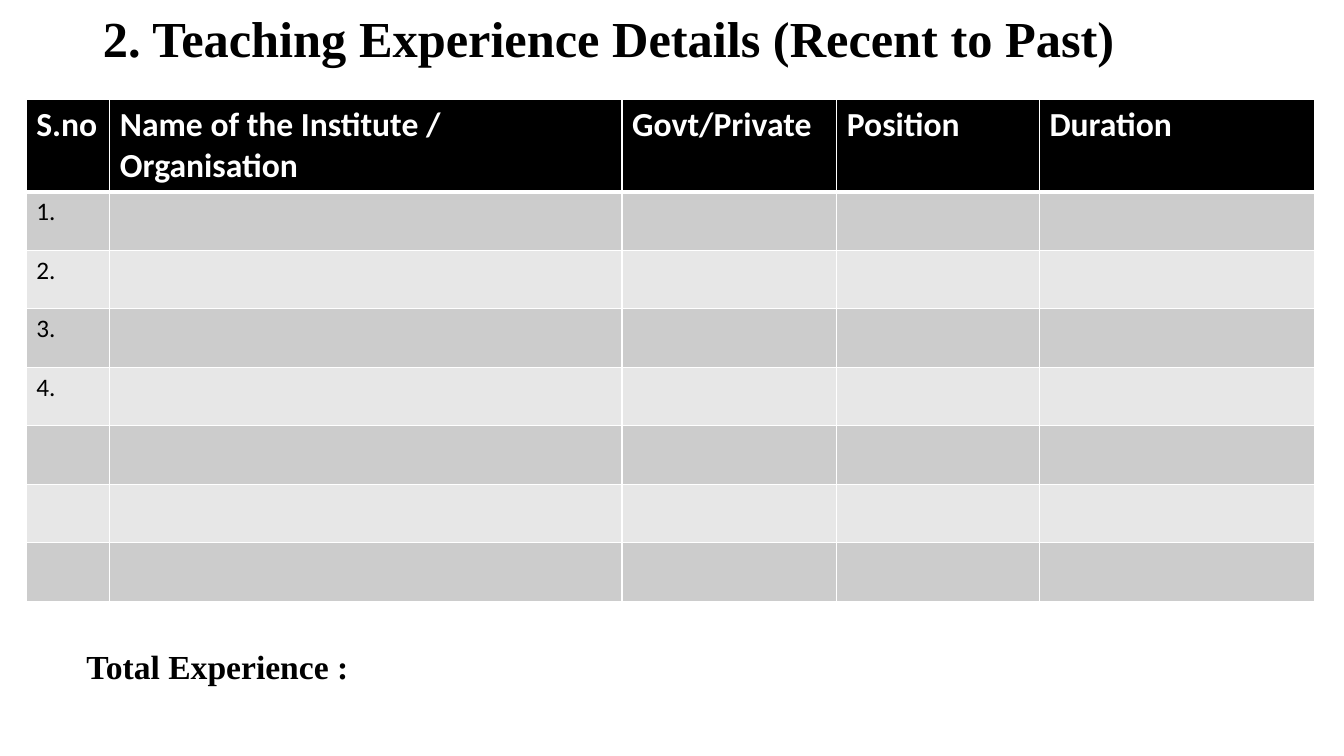
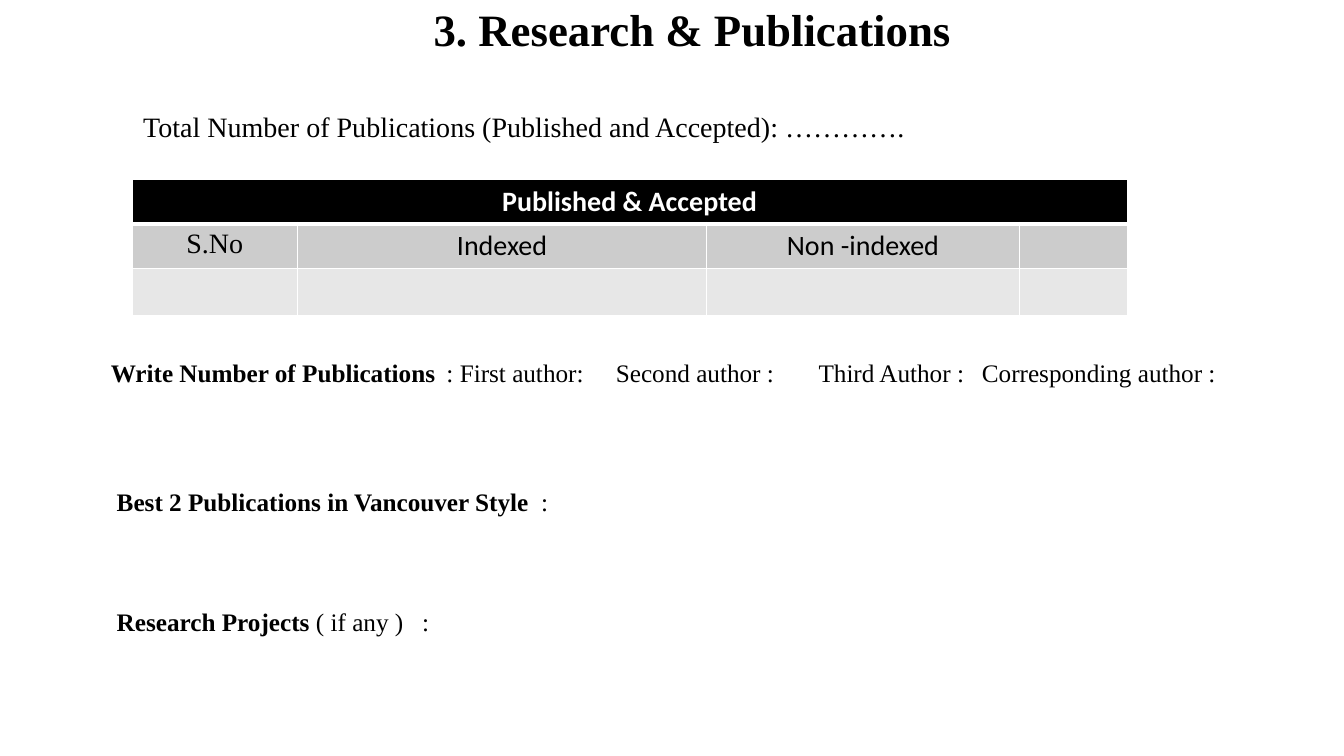
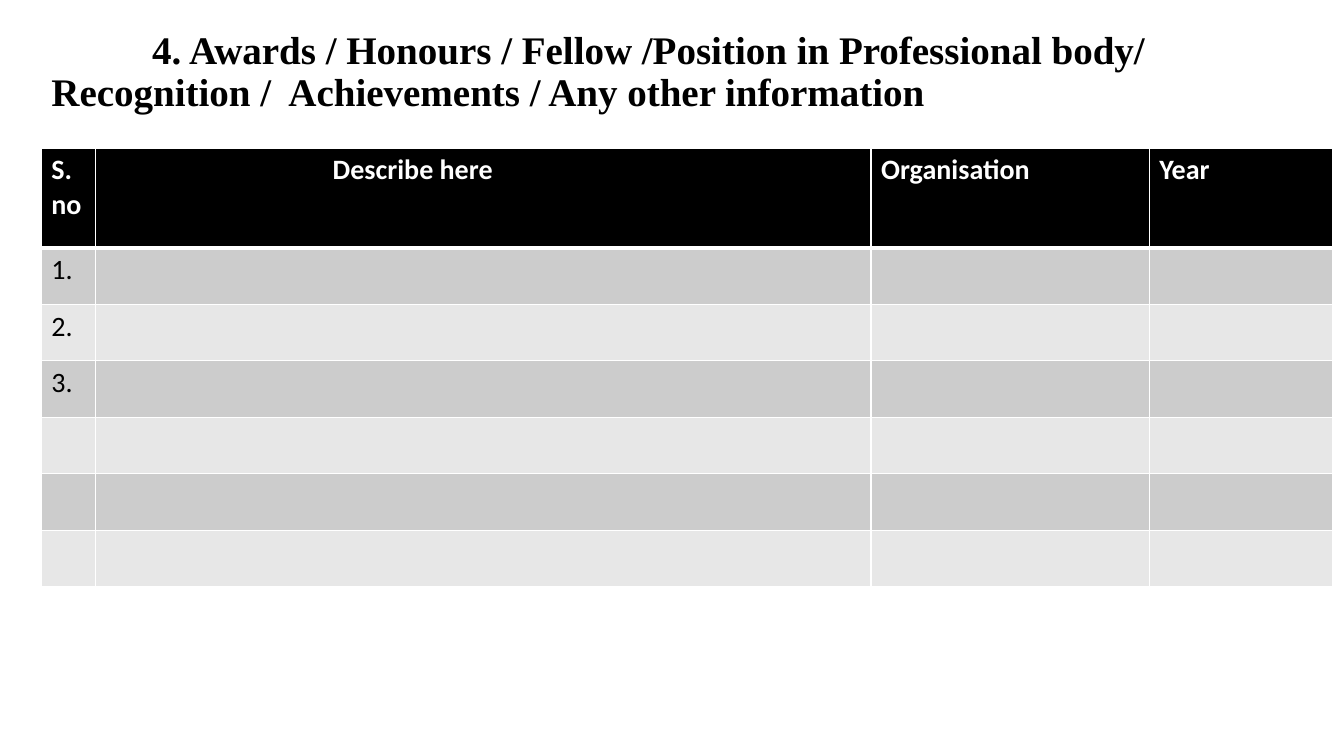
from lxml import etree
from pptx import Presentation
from pptx.dml.color import RGBColor
from pptx.enum.text import MSO_ANCHOR, MSO_AUTO_SIZE, PP_ALIGN
from pptx.oxml.ns import qn
from pptx.util import Emu, Pt

LEFT, CENTER = PP_ALIGN.LEFT, PP_ALIGN.CENTER
MIDDLE, NO_FIT = MSO_ANCHOR.MIDDLE, MSO_AUTO_SIZE.NONE

SERIF, SANS = "Times New Roman", "Calibri"
BLACK, WHITE = "000000", "FFFFFF"
BANDS = ("CCCCCC", "E7E7E7")
CONTENT_LAYOUT, TITLE_LAYOUT = 1, 5


def px(n):
    """100 px to the inch."""
    return Emu(n * 9144)


def color(hex_string):
    return RGBColor.from_string(hex_string)


def style(p, size, font=SERIF, bold=False, fill=BLACK):
    f = p.font
    f.size, f.name, f.bold = Pt(size), font, bold
    f.color.rgb = color(fill)


def indent(p, margin=0, first=0):
    pPr = p._p.get_or_add_pPr()
    pPr.set("marL", str(px(margin)))
    pPr.set("indent", str(px(first)))


def place(shape, box):
    shape.left, shape.top, shape.width, shape.height = map(px, box)


def add_title(s, box, text, size, margin=0, first=0):
    title = s.shapes.title
    place(title, box)
    tf = title.text_frame
    tf.text = text
    tf.auto_size, tf.vertical_anchor = NO_FIT, MIDDLE
    p = tf.paragraphs[0]
    p.alignment, p.line_spacing = LEFT, 0.9
    indent(p, margin, first)
    style(p, size, bold=True)


def add_body(s, box, text, size, margin, inset_top):
    body = s.placeholders[1]
    place(body, box)
    tf = body.text_frame
    tf.text = text
    tf.auto_size, tf.margin_top = NO_FIT, px(inset_top)
    p = tf.paragraphs[0]
    p.line_spacing, p.space_before = 0.9, Pt(0)
    indent(p, margin)
    etree.SubElement(p._p.pPr, qn("a:buNone"))
    style(p, size)


def add_line(s, box, runs, size, tabs=()):
    """Text box of one paragraph; runs are (text, bold), tabs are px from its text edge."""
    tf = s.shapes.add_textbox(*map(px, box)).text_frame
    tf.word_wrap = True
    p = tf.paragraphs[0]
    if tabs:
        tab_list = etree.SubElement(p._p.get_or_add_pPr(), qn("a:tabLst"))
        for pos in tabs:
            etree.SubElement(tab_list, qn("a:tab"), pos=str(px(pos)), algn="l")
    style(p, size)
    for text, bold in runs:
        r = p.add_run()
        r.text, r.font.bold = text, bold


def set_borders(cell, bottom):
    tcPr = cell._tc.get_or_add_tcPr()
    for side, width in (("L", 1), ("R", 1), ("T", 1), ("B", bottom)):
        ln = etree.SubElement(tcPr, qn(f"a:ln{side}"), w=str(Pt(width)))
        fill = etree.SubElement(ln, qn("a:solidFill"))
        etree.SubElement(fill, qn("a:srgbClr"), val=WHITE)


def add_grid(s, left, top, cols, rows, texts, head_size, size, align=LEFT):
    """Table with a black head row and banded rows; texts may be shorter than the grid."""
    table = s.shapes.add_table(len(rows), len(cols), px(left), px(top),
                               px(sum(cols)), px(sum(rows))).table
    for column, width in zip(table.columns, cols):
        column.width = px(width)
    for i, height in enumerate(rows):
        table.rows[i].height = px(height)
        head = i == 0
        row_texts = texts[i] if i < len(texts) else []
        for j in range(len(cols)):
            cell = table.cell(i, j)
            set_borders(cell, 3 if head else 1)
            cell.fill.solid()
            cell.fill.fore_color.rgb = color(BLACK if head else BANDS[(i - 1) % 2])
            if j < len(row_texts):
                cell.text = row_texts[j]
            for p in cell.text_frame.paragraphs:
                p.alignment = align
                style(p, head_size if head else size, SANS, head, WHITE if head else BLACK)
    return table


def teaching_slide(prs):
    s = prs.slides.add_slide(prs.slide_layouts[TITLE_LAYOUT])
    add_title(s, (92, -17, 1150, 116), "2. Teaching Experience Details (Recent to Past)", 36)
    heads = ["S.no", "Name of the Institute / Organisation", "Govt/Private",
             "Position", "Duration"]
    add_grid(s, 26, 99, [83, 508, 213, 201, 273], [91] + [58] * 7,
             [heads] + [[f"{n}."] for n in range(1, 5)], 24, 18)
    add_line(s, (76, 636, 1103, 50), [("Total Experience :", True)], 24)


def research_slide(prs):
    s = prs.slides.add_slide(prs.slide_layouts[CONTENT_LAYOUT])
    add_title(s, (8, -20, 1234, 103), "3. Research & Publications", 32, margin=412)
    add_body(s, (8, 61, 1319, 471),
             "Total Number of Publications (Published and Accepted): ………….",
             20, margin=124, inset_top=51)
    table = add_grid(s, 131, 178, [164, 406, 310, 107], [44, 43, 47],
                     [["Published & Accepted"], ["S.No", "Indexed", "Non -indexed"]],
                     20, 20, CENTER)
    table.cell(0, 0).merge(table.cell(0, 3))
    table.cell(1, 0).text_frame.paragraphs[0].font.name = SERIF

    authors = ": First author:\tSecond author :\tThird Author :\tCorresponding author :"
    add_line(s, (100, 350, 1162, 71),
             [("Write Number of Publications\t", True), (authors, False)],
             18, (333, 501, 702, 864))
    add_line(s, (106, 478, 1156, 71),
             [("Best 2 Publications in Vancouver Style\t", True), (":", False)], 18, (421,))
    add_line(s, (106, 597, 1156, 71),
             [("Research Projects ", True), ("( if any )\t:", False)], 18, (303,))


def awards_slide(prs):
    s = prs.slides.add_slide(prs.slide_layouts[TITLE_LAYOUT])
    add_title(s, (41, 30, 1281, 84),
              "4. Awards / Honours / Fellow /Position in Professional body/ "
              "Recognition /  Achievements / Any other information", 27.9, first=100)
    table = add_grid(s, 41, 147, [54, 769, 276, 182], [99] + [56] * 6,
                     [["S.\nno", "Describe here", "Organisation", "Year"]]
                     + [[f"{n}."] for n in range(1, 4)], 20, 20)
    indent(table.cell(0, 1).text_frame.paragraphs[0], 225)


def main():
    prs = Presentation()
    prs.slide_width, prs.slide_height = px(1333), px(750)
    for build in (teaching_slide, research_slide, awards_slide):
        build(prs)
    prs.save("out.pptx")


if __name__ == "__main__":
    main()
